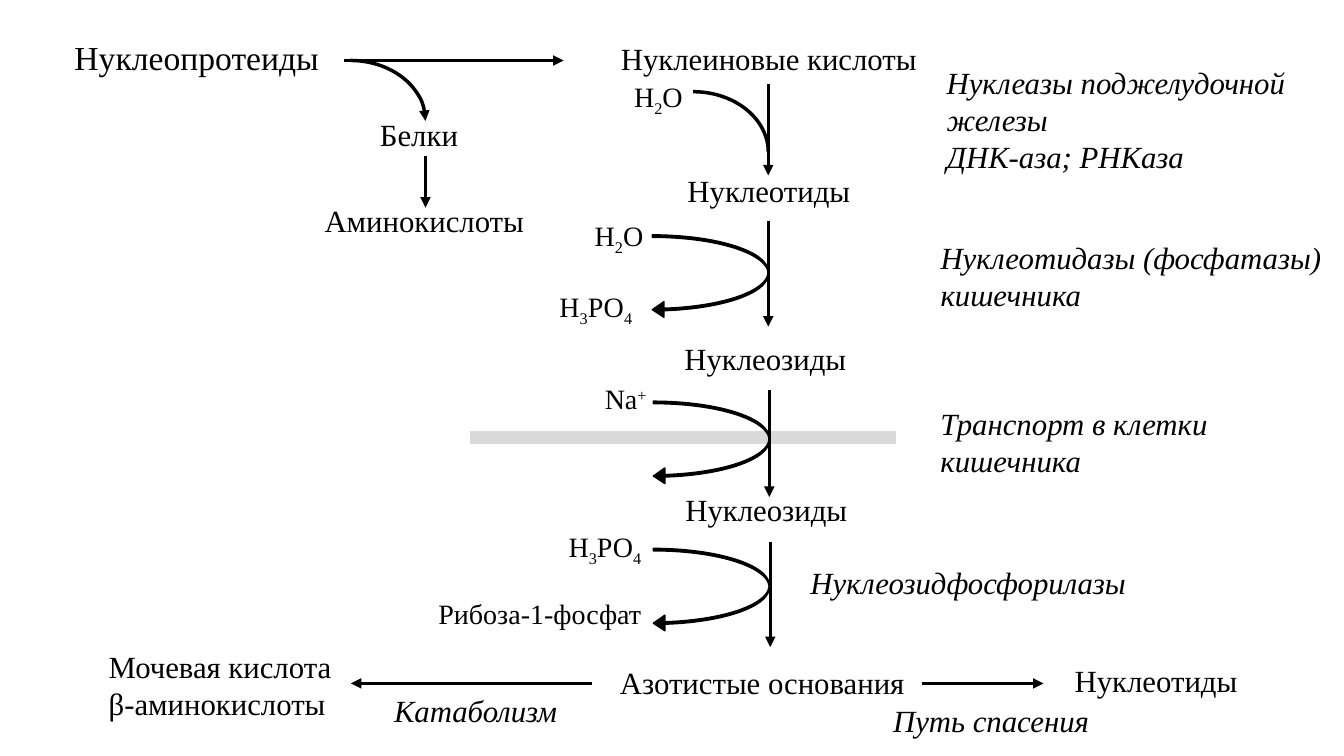
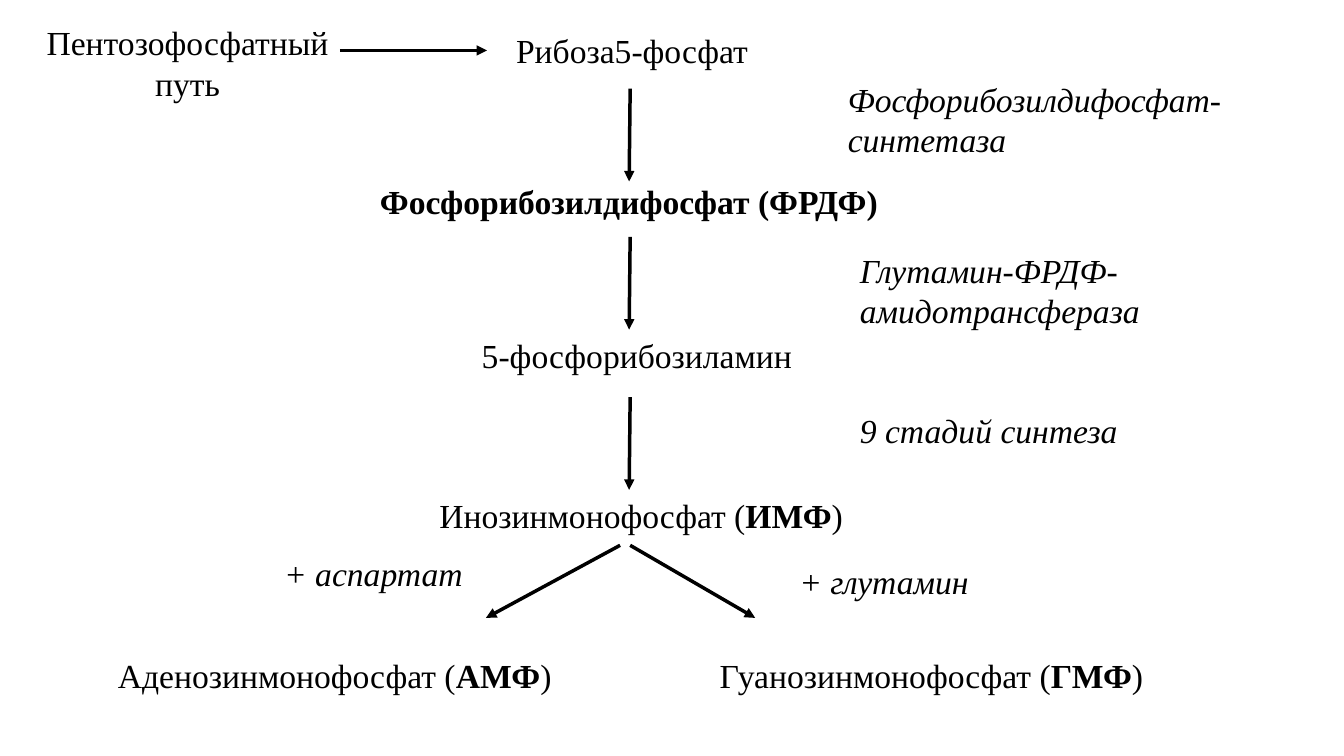
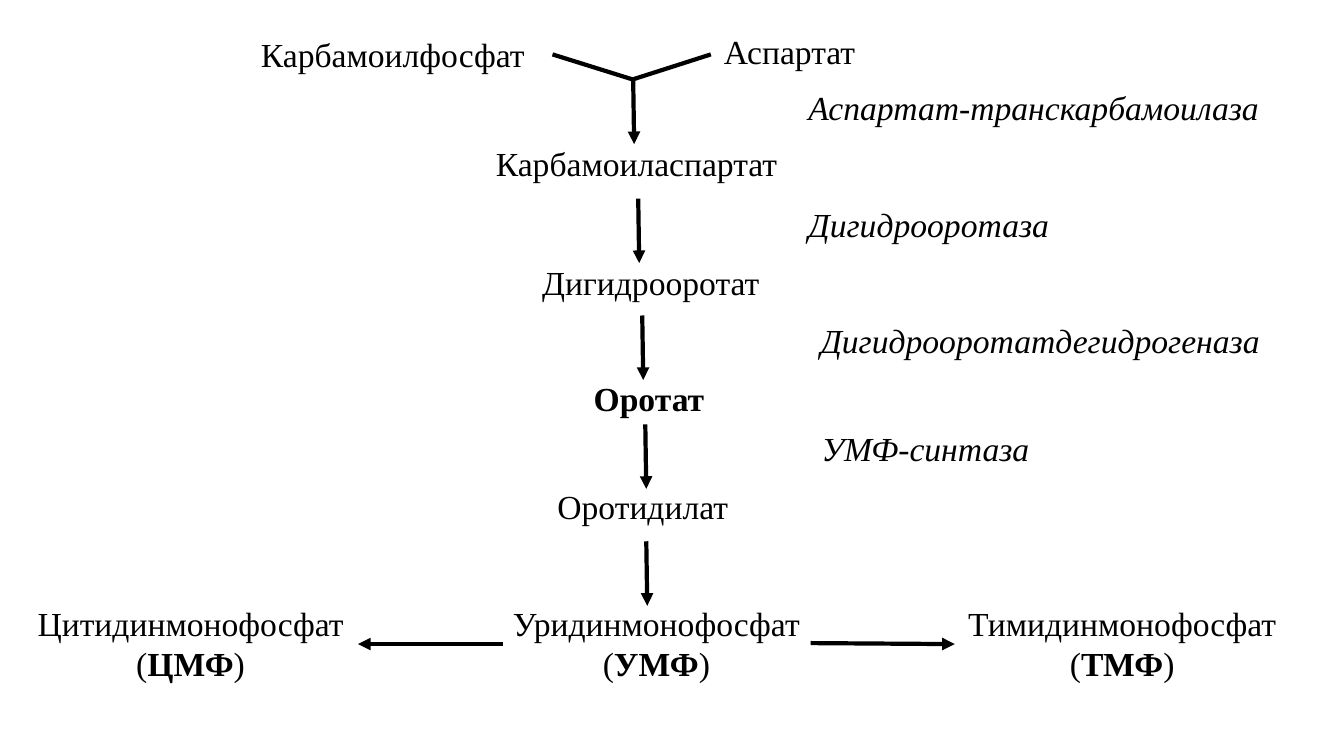
from pptx import Presentation
from pptx.dml.color import RGBColor as Rgb
from pptx.enum.shapes import MSO_CONNECTOR as Conn, MSO_SHAPE as Kind
from pptx.enum.text import MSO_AUTO_SIZE as Fit, PP_ALIGN as Align
from pptx.oxml.ns import qn
from pptx.util import Emu, Pt
from lxml.etree import SubElement as Sub

SCALE = 9144  # EMU in one px, 100 px to the inch
FONT = "Times New Roman"
HUES = {"ink": "000000", "wall": "D9D9D9", "page": "FFFFFF"}
BASE = {"_": "-25000", "^": "30000"}


def px(n):
    return Emu(n * SCALE)


def hue(name):
    return Rgb.from_string(HUES[name])


class Deck:
    def __init__(self):
        self.prs = Presentation()
        self.prs.slide_width, self.prs.slide_height = px(1333), px(750)

    def page(self, size, weight):
        """Start a slide with its own text size and arrow weight."""
        self.slide = self.prs.slides.add_slide(self.prs.slide_layouts[6])
        fill = self.slide.background.fill
        fill.solid()
        fill.fore_color.rgb = hue("page")
        self.size, self.weight = size, weight

    def text(self, x, y, w, text, size=None, rows=1, ital=False, mid=False):
        """Parts split by |: *bold, _subscript, ^superscript."""
        size = size or self.size
        high = round(10 + rows * size * 1.68)
        box = self.slide.shapes.add_textbox(px(x), px(y), px(w), px(high))
        frame = box.text_frame
        frame.word_wrap = True
        frame.auto_size = Fit.SHAPE_TO_FIT_TEXT
        frame.text = text
        for para in frame.paragraphs:
            para.alignment = Align.CENTER if mid else Align.LEFT
            parts = para.text.split("|")
            para.text = ""
            for part in parts:
                mark = part[0] if part[0] in "*_^" else ""
                run = para.add_run()
                run.text = part[len(mark):]
                font = run.font
                font.name, font.size = FONT, Pt(size)
                font.color.rgb = hue("ink")
                font.italic, font.bold = ital, mark == "*"
                if mark in BASE:
                    run._r.get_or_add_rPr().set("baseline", BASE[mark])

    def note(self, x, y, w, text, rows=1):
        self.text(x, y, w, text, rows=rows, ital=True)

    def edge(self, item, weight, color="ink", head=False):
        item.line.color.rgb = hue(color)
        item.line.width = Pt(weight)
        if head:
            ln = item._element.spPr.find(qn("a:ln"))
            Sub(ln, qn("a:tailEnd")).set("type", "triangle")

    def line(self, x1, y1, x2, y2, head=True):
        item = self.slide.shapes.add_connector(
            Conn.STRAIGHT, px(x1), px(y1), px(x2), px(y2))
        self.edge(item, self.weight, head=head)
        Sub(item._element.spPr, qn("a:effectLst"))

    def shape(self, kind, x, y, w, h, color=None):
        item = self.slide.shapes.add_shape(kind, px(x), px(y), px(w), px(h))
        item.shadow.inherit = False
        if color:
            item.fill.solid()
            item.fill.fore_color.rgb = hue(color)
            self.edge(item, 1, color)
        else:
            item.fill.background()
        return item

    def arc(self, x, y, head=False):
        self.edge(self.shape(Kind.ARC, x, y, 149, 120), self.weight, head=head)

    def turn(self, x, y):
        item = self.shape(Kind.CURVED_LEFT_ARROW, x, y, 115, 82, "ink")
        for i, val in enumerate((0.03, 0.19, 0.14)):
            item.adjustments[i] = val


def decay(deck):
    deck.page(22, 2.5)
    deck.shape(Kind.RECTANGLE, 467, 428, 421, 12, "wall")  # cell wall

    # Protein branch
    deck.text(64, 32, 315, "Нуклеопротеиды", 24)
    deck.line(341, 60, 559, 60)
    deck.arc(273, 60, head=True)
    deck.text(367, 110, 125, "Белки")
    deck.line(422, 155, 422, 206)
    deck.text(312, 195, 225, "Аминокислоты")

    # Main chain
    for x, y, w, text in (
            (606, 34, 327, "Нуклеиновые кислоты"),
            (672, 165, 201, "Нуклеотиды"),
            (669, 332, 206, "Нуклеозиды"),
            (670, 482, 206, "Нуклеозиды"),
            (605, 654, 341, "Азотистые основания")):
        deck.text(x, y, w, text)
    for x, top, end in ((762, 83, 174), (762, 219, 324),
                        (763, 387, 493), (764, 538, 642)):
        deck.line(x, top, x, end)

    # Side reagents
    deck.arc(613, 91)
    for x, y in ((647, 233), (648, 398), (648, 544)):
        deck.turn(x, y)
    for x, y, w, text in (
            (619, 74, 101, "Н|_2|О"), (580, 212, 101, "Н|_2|О"),
            (545, 282, 125, "Н|_3|РО|_4"), (590, 374, 86, "Na|^+"),
            (554, 520, 125, "Н|_3|РО|_4"),
            (425, 587, 254, "Рибоза-1-фосфат")):
        deck.text(x, y, w, text, 20)

    # Enzymes
    deck.note(929, 58, 373,
              "Нуклеазы поджелудочной железы\nДНК-аза; РНКаза", 3)
    deck.note(923, 232, 399, "Нуклеотидазы (фосфатазы) кишечника", 2)
    deck.note(923, 397, 373, "Транспорт в клетки кишечника", 2)
    deck.note(794, 554, 373, "Нуклеозидфосфорилазы")

    # Fate of the bases
    deck.line(587, 678, 348, 678)
    deck.line(914, 678, 1035, 678)
    deck.text(98, 638, 341, "Мочевая кислота\nβ-аминокислоты", rows=2)
    deck.text(1056, 652, 201, "Нуклеотиды")
    deck.note(381, 681, 187, "Катаболизм")
    deck.note(876, 691, 260, "Путь спасения")


def purine(deck):
    deck.page(24, 2.5)

    # Main chain
    deck.text(33, 17, 306, "Пентозофосфатный путь", rows=2, mid=True)
    deck.line(337, 50, 483, 50)
    for x, y, w, text in (
            (502, 25, 267, "Рибоза5-фосфат"),
            (367, 175, 516, "*Фосфорибозилдифосфат (ФРДФ)"),
            (468, 327, 334, "5-фосфорибозиламин"),
            (426, 486, 444, "Инозинмонофосфат (|*ИМФ|)"),
            (107, 645, 496, "Аденозинмонофосфат (|*АМФ|)"),
            (704, 645, 496, "Гуанозинмонофосфат (|*ГМФ|)")):
        deck.text(x, y, w, text)
    for y in (88, 235, 394):
        deck.line(625, y, 624, y + 92)
    deck.line(615, 541, 482, 613)
    deck.line(625, 541, 749, 613)

    # Enzymes and donors
    deck.note(831, 73, 391, "Фосфорибозилдифосфат-синтетаза", 2)
    deck.note(843, 243, 391, "Глутамин-ФРДФ-амидотрансфераза", 2)
    deck.note(843, 402, 391, "9 стадий синтеза")
    deck.note(272, 544, 210, "+ аспартат")
    deck.note(783, 552, 391, "+ глутамин")


def pyrim(deck):
    deck.page(24, 3)

    # Main chain
    for x, y, w, text in (
            (249, 29, 299, "Карбамоилфосфат"),
            (708, 26, 168, "Аспартат"),
            (482, 137, 310, "Карбамоиласпартат"),
            (528, 255, 246, "Дигидрооротат"),
            (579, 370, 146, "*Оротат"),
            (543, 477, 194, "Оротидилат")):
        deck.text(x, y, w, text)
    deck.line(628, 79, 548, 54, head=False)
    deck.line(705, 54, 627, 79, head=False)
    for x, y in ((628, 79), (633, 197), (637, 313), (640, 421), (641, 537)):
        deck.line(x, y, x + 1, y + 64)

    # Products
    for x, w, text in ((23, 332, "Цитидинмонофосфат\n(|*ЦМФ|)"),
                       (497, 308, "Уридинмонофосфат\n(|*УМФ|)"),
                       (947, 332, "Тимидинмонофосфат\n(|*ТМФ|)")):
        deck.text(x, 593, w, text, rows=2, mid=True)
    deck.line(499, 639, 355, 639)
    deck.line(804, 638, 947, 639)

    # Enzymes
    for x, y, w, text in (
            (792, 81, 487, "Аспартат-транскарбамоилаза"),
            (792, 197, 265, "Дигидрооротаза"),
            (804, 312, 460, "Дигидрооротатдегидрогеназа"),
            (805, 420, 460, "УМФ-синтаза")):
        deck.note(x, y, w, text)


def main():
    deck = Deck()
    for draw in (decay, purine, pyrim):
        draw(deck)
    deck.prs.save("out.pptx")


if __name__ == "__main__":
    main()
